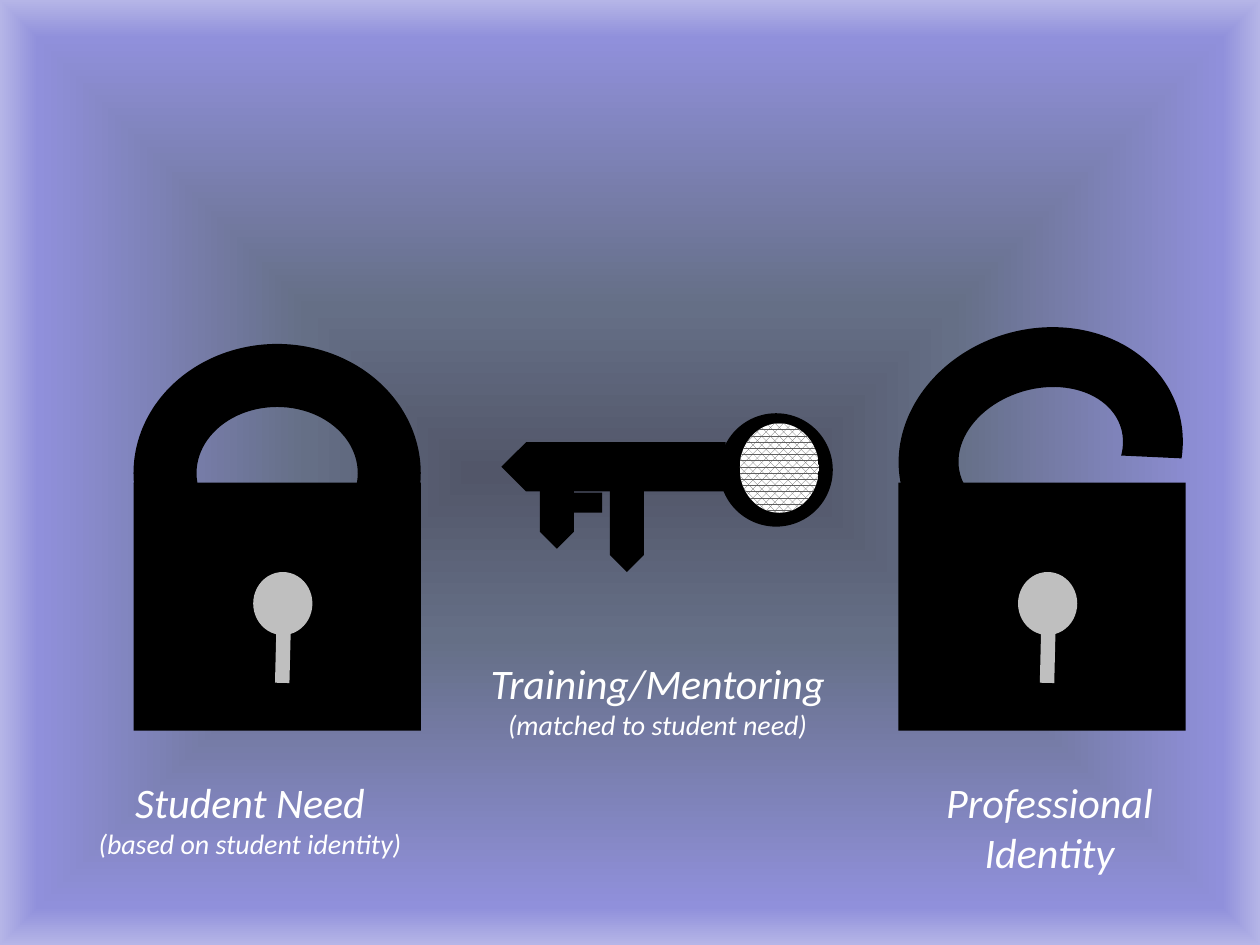
from lxml import etree
from pptx import Presentation
from pptx import util as u
from pptx.dml.color import RGBColor
from pptx.enum import dml, shapes, text
from pptx.oxml import parse_xml
from pptx.oxml.ns import nsdecls, qn

Inches = u.Inches
BLACK = RGBColor(0x00, 0x00, 0x00)
WHITE = RGBColor(0xFF, 0xFF, 0xFF)
KEYHOLE_GRAY = RGBColor(0xBF, 0xBF, 0xBF)
PATTERN_GRAY = RGBColor(0x60, 0x60, 0x60)
GRADIENT = [
    (0, RGBColor(0x52, 0x56, 0x69)),
    (35, RGBColor(0x65, 0x6F, 0x86)),
    (92, RGBColor(0x90, 0x90, 0xDB)),
    (100, RGBColor(0xB5, 0xB5, 0xE7)),
]
PRESET = shapes.MSO_SHAPE

presentation = Presentation()
presentation.slide_width = Inches(10)
presentation.slide_height = Inches(7.5)
slide = presentation.slides.add_slide(presentation.slide_layouts[6])

stops = "".join(
    f'<a:gs pos="{position * 1000}"><a:srgbClr val="{color}"/></a:gs>'
    for position, color in GRADIENT
)
background = parse_xml(
    f'<p:bg {nsdecls("p", "a")}><p:bgPr><a:gradFill rotWithShape="1">'
    f'<a:gsLst>{stops}</a:gsLst><a:path path="shape">'
    '<a:fillToRect l="50000" t="50000" r="50000" b="50000"/></a:path>'
    '</a:gradFill><a:effectLst/></p:bgPr></p:bg>'
)
slide.element.find(qn("p:cSld")).insert(0, background)


def add_part(preset, left, top, width, height, color=BLACK, rotation=0):
    shape = slide.shapes.add_shape(
        preset, Inches(left), Inches(top), Inches(width), Inches(height)
    )
    shape.shadow.inherit = False
    shape.fill.solid()
    shape.fill.fore_color.rgb = color
    shape.line.fill.background()
    shape.rotation = rotation
    return shape


locks = [
    (1.06, (1.06, 2.73, 2.28, 2.05), 0),
    (7.13, (7.12, 2.61, 2.28, 1.95), 343.8),
]
for left, shackle_box, rotation in locks:
    add_part(PRESET.RECTANGLE, left, 3.83, 2.28, 1.97)
    shackle = add_part(PRESET.BLOCK_ARC, *shackle_box, rotation=rotation)
    for index, value in enumerate((99.905, 11.338, 0.244)):
        shackle.adjustments[index] = value
    slot = slide.shapes.add_connector(
        shapes.MSO_CONNECTOR.STRAIGHT,
        Inches(left + 1.19), Inches(5.01), Inches(left + 1.18), Inches(5.42),
    )
    slot.line.color.rgb = KEYHOLE_GRAY
    slot.line.width = u.Pt(8.25)
    etree.SubElement(slot.element.spPr, qn("a:effectLst"))
    add_part(PRESET.OVAL, left + 0.95, 4.54, 0.47, 0.5, KEYHOLE_GRAY)

add_part(PRESET.OVAL, 5.71, 3.28, 0.9, 0.9)
key_grip = add_part(PRESET.OVAL, 5.87, 3.36, 0.63, 0.71)
key_grip.fill.patterned()
key_grip.fill.pattern = dml.MSO_PATTERN.PERCENT_70
key_grip.fill.fore_color.rgb = PATTERN_GRAY
key_grip.fill.back_color.rgb = WHITE
key_shaft = add_part(PRESET.PENTAGON, 3.98, 3.51, 1.78, 0.39)
key_shaft.element.spPr.find(qn("a:xfrm")).set("flipH", "1")
add_part(PRESET.PENTAGON, 4.16, 3.96, 0.52, 0.27, rotation=90)
add_part(PRESET.PENTAGON, 4.62, 4.05, 0.71, 0.27, rotation=90)
add_part(PRESET.RECTANGLE, 4.45, 3.91, 0.33, 0.16)

captions = [
    ((0.35, 6.11, 3.27, 0.77),
     [("Student Need", 24), ("(based on student identity)", 16)]),
    ((3.52, 5.17, 3.4, 0.77),
     [("Training/Mentoring", 24), ("(matched to student need)", 16)]),
    ((7.2, 6.11, 2.26, 0.91),
     [("Professional", 24), ("Identity", 24)]),
]
for box, lines in captions:
    caption = slide.shapes.add_textbox(*[Inches(length) for length in box])
    frame = caption.text_frame
    frame.word_wrap = False
    frame.auto_size = text.MSO_AUTO_SIZE.SHAPE_TO_FIT_TEXT
    for index, (wording, size) in enumerate(lines):
        paragraph = frame.add_paragraph() if index else frame.paragraphs[0]
        paragraph.alignment = text.PP_ALIGN.CENTER
        run = paragraph.add_run()
        run.text = wording
        run.font.name = "Calibri"
        run.font.size = u.Pt(size)
        run.font.italic = True
        run.font.color.rgb = WHITE

presentation.save("out.pptx")
